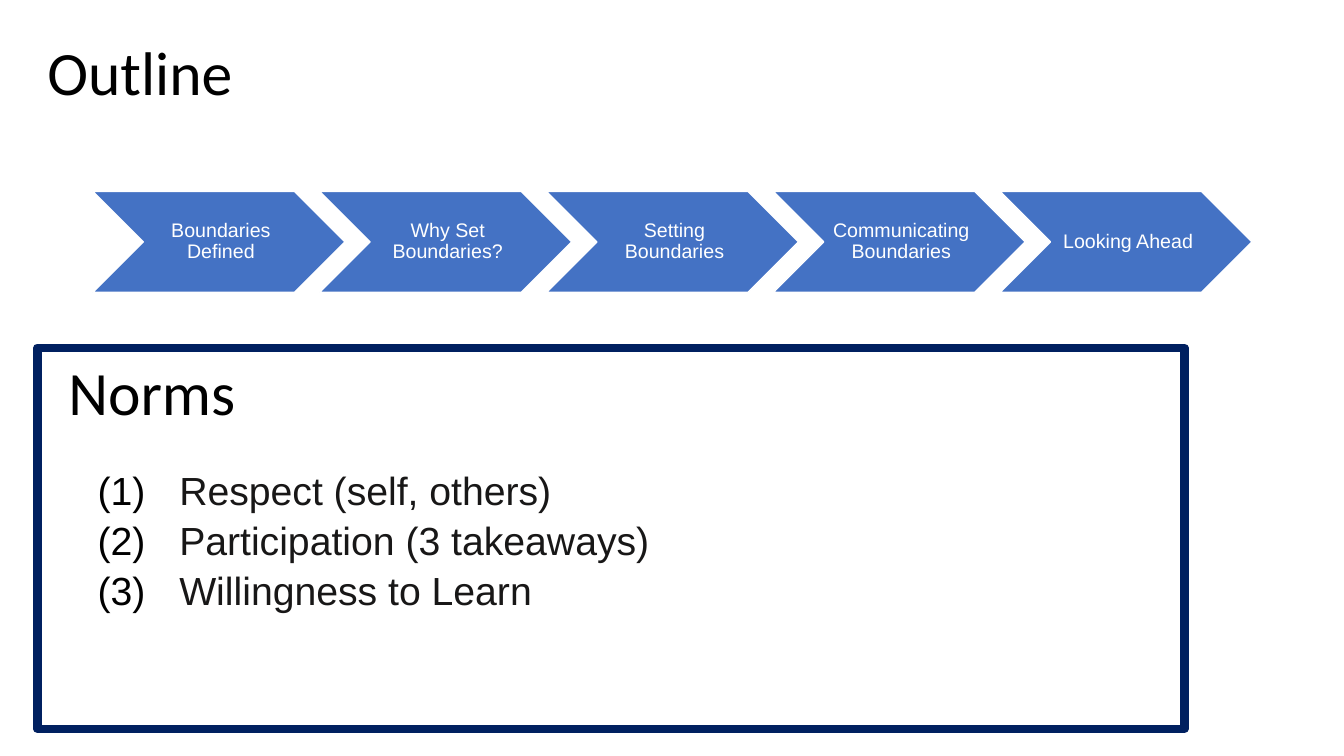
from lxml import etree
from pptx import Presentation
from pptx.dml.color import RGBColor
from pptx.enum import shapes, text
from pptx.oxml.ns import qn
from pptx.util import Pt

# Content
TITLE = "Outline"
STEPS = [
    "Boundaries Defined",
    "Why Set Boundaries?",
    "Setting Boundaries",
    "Communicating Boundaries",
    "Looking Ahead",
]
NORMS_TITLE = "Norms"
NORMS = ["Respect (self, others)", "Participation (3 takeaways)", "Willingness to Learn"]

COLORS = {
    "black": "000000",
    "white": "FFFFFF",
    "step": "4472C4",
    "frame": "002060",
    "norm": "181717",
}

# Layout in points
TITLE_BOX = (26.64, 19.44, 828, 68.4)
STEP_LEFT, STEP_TOP, STEP_WIDTH, STEP_HEIGHT, STEP_PITCH = 66.4, 136.8, 180, 72, 162
NORMS_TITLE_BOX = (41.76, 230.4, 828, 104.4)
FRAME_BOX = (26.64, 248.4, 819.36, 272.16)
NORM_INDENT, NORM_HANGING = 94.32, 58.32


def color(name):
    return RGBColor.from_string(COLORS[name])


def points(box):
    return [Pt(value) for value in box]


def write(paragraph, wording, size, font, color_name, spacing, align=text.PP_ALIGN.LEFT):
    paragraph.alignment = align
    paragraph.line_spacing = spacing
    run = paragraph.add_run()
    run.text = wording
    run.font.size = Pt(size)
    run.font.name = font
    run.font.color.rgb = color(color_name)


def prepare(shape):
    frame = shape.text_frame
    frame.word_wrap = True
    frame.auto_size = text.MSO_AUTO_SIZE.NONE
    frame.vertical_anchor = text.MSO_ANCHOR.MIDDLE
    return frame


def number(paragraph):
    properties = paragraph._p.get_or_add_pPr()
    properties.set("marL", str(Pt(NORM_INDENT)))
    properties.set("indent", str(-Pt(NORM_HANGING)))
    bullet_color = etree.SubElement(properties, qn("a:buClr"))
    etree.SubElement(bullet_color, qn("a:srgbClr"), val=COLORS["black"])
    etree.SubElement(properties, qn("a:buFont"), typeface="Arial")
    etree.SubElement(properties, qn("a:buAutoNum"), type="arabicParenBoth")


presentation = Presentation()
presentation.slide_width, presentation.slide_height = Pt(960), Pt(540)
slide = presentation.slides.add_slide(presentation.slide_layouts[5])

# Title
title = slide.shapes.title
title.left, title.top, title.width, title.height = points(TITLE_BOX)
write(prepare(title).paragraphs[0], TITLE, 44, "Calibri", "black", 0.9)

# Chevron steps
for index, step in enumerate(STEPS):
    box = (STEP_LEFT + index * STEP_PITCH, STEP_TOP, STEP_WIDTH, STEP_HEIGHT)
    chevron = slide.shapes.add_shape(shapes.MSO_SHAPE.CHEVRON, *points(box))
    chevron.shadow.inherit = False
    chevron.fill.solid()
    chevron.fill.fore_color.rgb = color("step")
    chevron.line.color.rgb = color("white")
    chevron.line.width = Pt(1)
    frame = prepare(chevron)
    frame.margin_left = Pt(4.4)
    frame.margin_top = frame.margin_right = frame.margin_bottom = Pt(1.5)
    write(frame.paragraphs[0], step, 14, "Arial", "white", 0.9, text.PP_ALIGN.CENTER)

# Norms heading
heading = slide.shapes.add_textbox(*points(NORMS_TITLE_BOX))
write(prepare(heading).paragraphs[0], NORMS_TITLE, 44, "Calibri", "black", 0.9)

# Framed list of norms
norms_frame = slide.shapes.add_shape(shapes.MSO_SHAPE.RECTANGLE, *points(FRAME_BOX))
norms_frame.shadow.inherit = False
norms_frame.fill.background()
norms_frame.line.color.rgb = color("frame")
norms_frame.line.width = Pt(6)
frame = prepare(norms_frame)
for index, norm in enumerate(NORMS):
    paragraph = frame.add_paragraph() if index else frame.paragraphs[0]
    write(paragraph, norm, 28, "Arial", "norm", 1.07)
    number(paragraph)

presentation.save("out.pptx")
